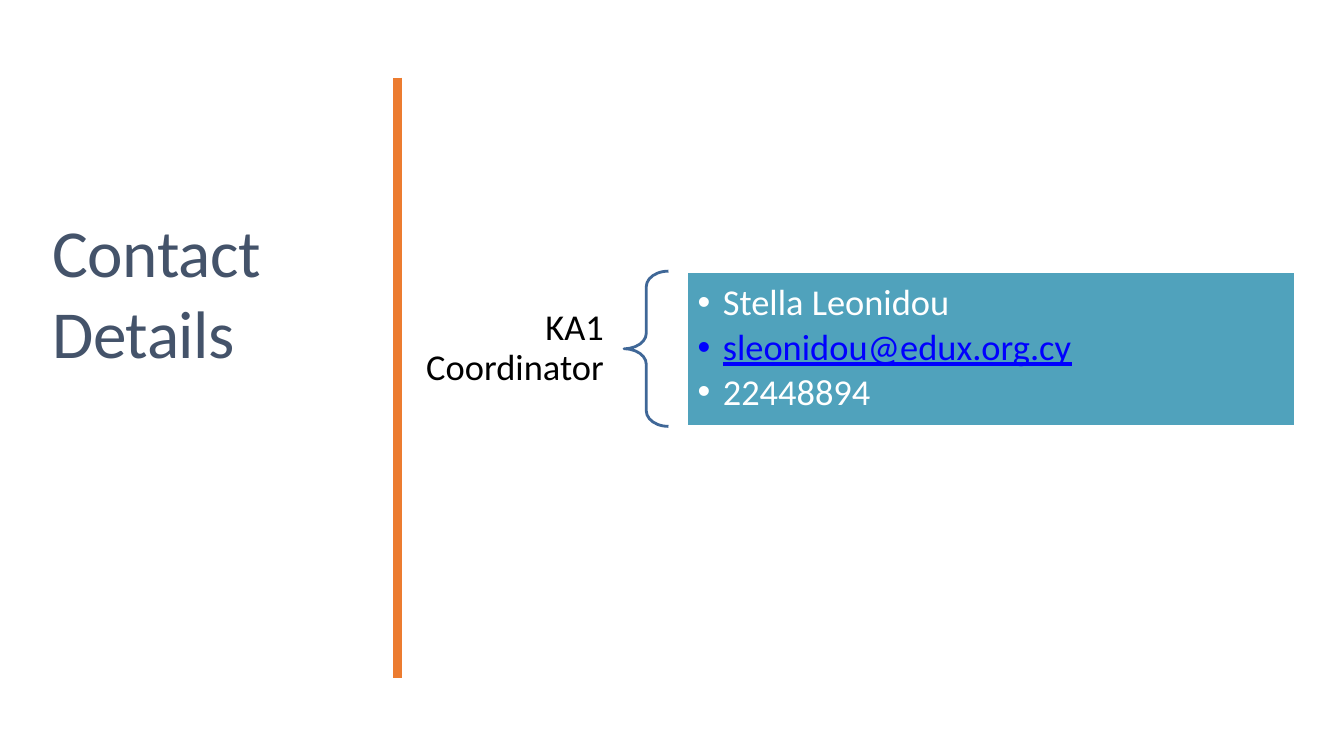
import pptx
import pptx.util
import pptx.dml.color
import pptx.enum.shapes
import pptx.enum.text
import pptx.oxml.ns
from dataclasses import dataclass
from lxml import etree

Inches = pptx.util.Inches
Pt = pptx.util.Pt
Align = pptx.enum.text.PP_ALIGN
Anchor = pptx.enum.text.MSO_ANCHOR
Shape = pptx.enum.shapes.MSO_SHAPE
qn = pptx.oxml.ns.qn


@dataclass(frozen=True)
class Theme:
    font: str = "Calibri"
    head: int = 48
    body: int = 26
    navy: str = "44536A"
    orange: str = "EC7C30"
    blue: str = "3F6797"
    teal: str = "50A2BC"
    link: str = "0000FF"
    black: str = "000000"
    white: str = "FFFFFF"


THEME = Theme()


def rgb(code):
    return pptx.dml.color.RGBColor.from_string(code)


def write(par, text, size=THEME.body, color=THEME.black, align=Align.LEFT,
          lines=0.9, before=0, after=0, under=False, track=None, bullet=None):
    """Fill one paragraph; track is in hundredths of a point."""
    par.alignment = align
    par.line_spacing = lines
    par.space_before = Pt(before)
    par.space_after = Pt(after)
    run = par.add_run()
    run.text = text
    run.font.name = THEME.font
    run.font.size = Pt(size)
    run.font.color.rgb = rgb(color)
    run.font.underline = under
    if track is not None:
        run.font._element.set("spc", str(track))
    if bullet:
        props = par._p.get_or_add_pPr()
        props.set("marL", str(Inches(0.25)))
        props.set("indent", str(-Inches(0.25)))
        etree.SubElement(props, qn("a:buFont")).set("typeface", "Arial")
        etree.SubElement(props, qn("a:buChar")).set("char", bullet)


def frame(shape, pads, anchor):
    """Set wrapping, left-top-right-bottom pads and anchor; return the frame."""
    text = shape.text_frame
    text.word_wrap = True
    text.auto_size = pptx.enum.text.MSO_AUTO_SIZE.NONE
    text.vertical_anchor = anchor
    (text.margin_left, text.margin_top,
     text.margin_right, text.margin_bottom) = map(Inches, pads)
    return text


def stroke(shape, color, width):
    shape.line.color.rgb = rgb(color)
    shape.line.width = Pt(width)


def heading(slide, x, y, w, h):
    title = slide.shapes.title
    title.left, title.top, title.width, title.height = map(Inches, (x, y, w, h))
    text = frame(title, (0, 0.01, 0, 0), Anchor.TOP)
    write(text.paragraphs[0], "Contact Details", size=THEME.head,
          color=THEME.navy, lines=1.0, before=1, track=-30)


def divider(slide, x, top, bottom):
    rule = slide.shapes.add_connector(
        pptx.enum.shapes.MSO_CONNECTOR.STRAIGHT,
        Inches(x), Inches(top), Inches(x), Inches(bottom))
    stroke(rule, THEME.orange, 6.43)
    etree.SubElement(rule._element.spPr, qn("a:effectLst"))


def contact(slide, x, y, w, h, role, lines):
    """Role on the left, a brace, and a filled card of contact lines."""
    shapes = slide.shapes
    side, brace, gap, tall = 2.22, 0.44, 0.18, 0.95

    label = shapes.add_textbox(Inches(x), Inches(y + (h - tall) / 2),
                               Inches(side), Inches(tall))
    text = frame(label, (0.2, 0.07, 0.2, 0.07), Anchor.MIDDLE)
    write(text.paragraphs[0], role, align=Align.RIGHT)

    curve = shapes.add_shape(Shape.LEFT_BRACE, Inches(x + side), Inches(y),
                             Inches(brace), Inches(h))
    curve.adjustments[0] = 0.35
    curve.adjustments[1] = 0.5
    curve.fill.background()
    curve.shadow.inherit = False
    stroke(curve, THEME.blue, 2)

    start = side + brace + gap
    card = shapes.add_shape(Shape.RECTANGLE, Inches(x + start), Inches(y),
                            Inches(w - start), Inches(h))
    card.fill.solid()
    card.fill.fore_color.rgb = rgb(THEME.teal)
    card.shadow.inherit = False
    stroke(card, THEME.white, 2)
    text = frame(card, (0.11,) * 4, Anchor.MIDDLE)
    for i, line in enumerate(lines):
        par = text.add_paragraph() if i else text.paragraphs[0]
        par.level = 1
        mail = "@" in line
        write(par, line, color=THEME.link if mail else THEME.white,
              under=mail, after=3.9, bullet="•")


def main():
    deck = pptx.Presentation()
    deck.slide_width, deck.slide_height = Inches(13.33), Inches(7.5)
    slide = deck.slides.add_slide(deck.slide_layouts.get_by_name("Title Only"))
    heading(slide, 0.52, 2.08, 3.25, 1.63)
    divider(slide, 3.94, 0.77, 6.73)
    contact(slide, 3.97, 2.69, 8.88, 1.54, "KA1 Coordinator",
            ["Stella Leonidou", "sleonidou@edux.org.cy", "22448894"])
    deck.save("out.pptx")


if __name__ == "__main__":
    main()
